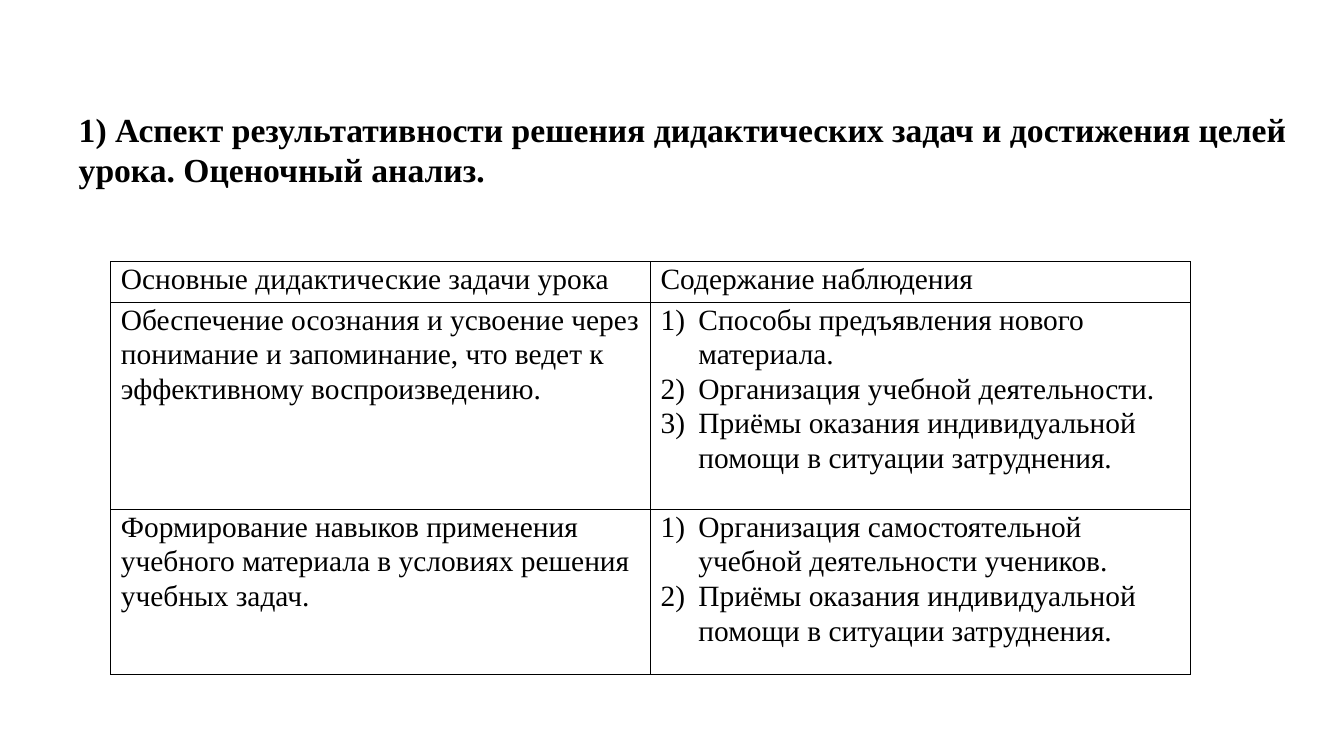
from lxml import etree
from pptx import Presentation
from pptx.dml.color import RGBColor
from pptx.enum.text import MSO_ANCHOR, MSO_AUTO_SIZE, PP_ALIGN
from pptx.oxml.ns import qn
from pptx.util import Pt

TOP, MIDDLE = MSO_ANCHOR.TOP, MSO_ANCHOR.MIDDLE
LEFT = PP_ALIGN.LEFT
NO_AUTOFIT = MSO_AUTO_SIZE.NONE
BLACK = RGBColor(0, 0, 0)
TITLE_FONT = {"name": "Times New Roman", "size": Pt(24), "bold": True}
CELL_FONT = {"name": "Times New Roman", "size": Pt(21), "bold": False}
LIST_INDENT = Pt(27)

TITLE = ("1) Аспект результативности решения дидактических задач и достижения "
         "целей урока. Оценочный анализ.")
HEADINGS = ["Основные дидактические задачи урока", "Содержание наблюдения"]
# Each task is followed by its numbered observations
TASKS = [
    ("Обеспечение осознания и усвоение через понимание и запоминание, "
     "что ведет к эффективному воспроизведению.",
     ["Способы предъявления нового материала.",
      "Организация учебной деятельности.",
      "Приёмы оказания индивидуальной помощи в ситуации затруднения."]),
    ("Формирование навыков применения учебного материала в условиях "
     "решения учебных задач.",
     ["Организация самостоятельной учебной деятельности учеников.",
      "Приёмы оказания индивидуальной помощи в ситуации затруднения."]),
]


def add_text(para, text, font_format):
    para.alignment = LEFT
    span = para.add_run()
    span.text = text
    for attribute, value in font_format.items():
        setattr(span.font, attribute, value)
    span.font.color.rgb = BLACK


def fill_cell(cell, texts, numbered=False):
    cell.margin_left = cell.margin_right = Pt(7.2)
    cell.margin_top = cell.margin_bottom = 0
    cell.vertical_anchor = TOP
    for number, text in enumerate(texts):
        frame = cell.text_frame
        para = frame.add_paragraph() if number else frame.paragraphs[0]
        para.line_spacing = 1.06
        if numbered:
            properties = para._p.get_or_add_pPr()
            properties.set("marL", str(LIST_INDENT))
            properties.set("indent", str(-LIST_INDENT))
            etree.SubElement(properties, qn("a:buFont"), typeface="+mj-lt")
            etree.SubElement(properties, qn("a:buAutoNum"), type="arabicParenR")
        add_text(para, text, CELL_FONT)
    para.space_after = Pt(8)

    # Thin black border on every side, no fill
    cell_properties = cell._tc.get_or_add_tcPr()
    for side in ("a:lnL", "a:lnR", "a:lnT", "a:lnB"):
        line = etree.SubElement(cell_properties, qn(side), w=str(Pt(1)))
        solid = etree.SubElement(line, qn("a:solidFill"))
        etree.SubElement(solid, qn("a:srgbClr"), val=str(BLACK))
    cell.fill.background()


deck = Presentation()
deck.slide_width, deck.slide_height = Pt(960), Pt(540)
page = deck.slides.add_slide(deck.slide_layouts[5])

# Title
title = page.shapes.title
title.left, title.top, title.width, title.height = Pt(49), Pt(73.5), Pt(884), Pt(65.5)
title.text_frame.auto_size = NO_AUTOFIT
title.text_frame.word_wrap = True
title.text_frame.vertical_anchor = MIDDLE
add_text(title.text_frame.paragraphs[0], TITLE, TITLE_FONT)

# Table of tasks and observations
table = page.shapes.add_table(3, 2, Pt(79.2), Pt(187), Pt(771), Pt(295)).table
table.first_row = table.horz_banding = False
for column in table.columns:
    column.width = Pt(385.5)
for row, height in zip(table.rows, (28.8, 148, 118)):
    row.height = Pt(height)

for column, heading in enumerate(HEADINGS):
    fill_cell(table.cell(0, column), [heading])
for row, (task, observations) in enumerate(TASKS, start=1):
    fill_cell(table.cell(row, 0), [task])
    fill_cell(table.cell(row, 1), observations, numbered=True)

deck.save("out.pptx")
